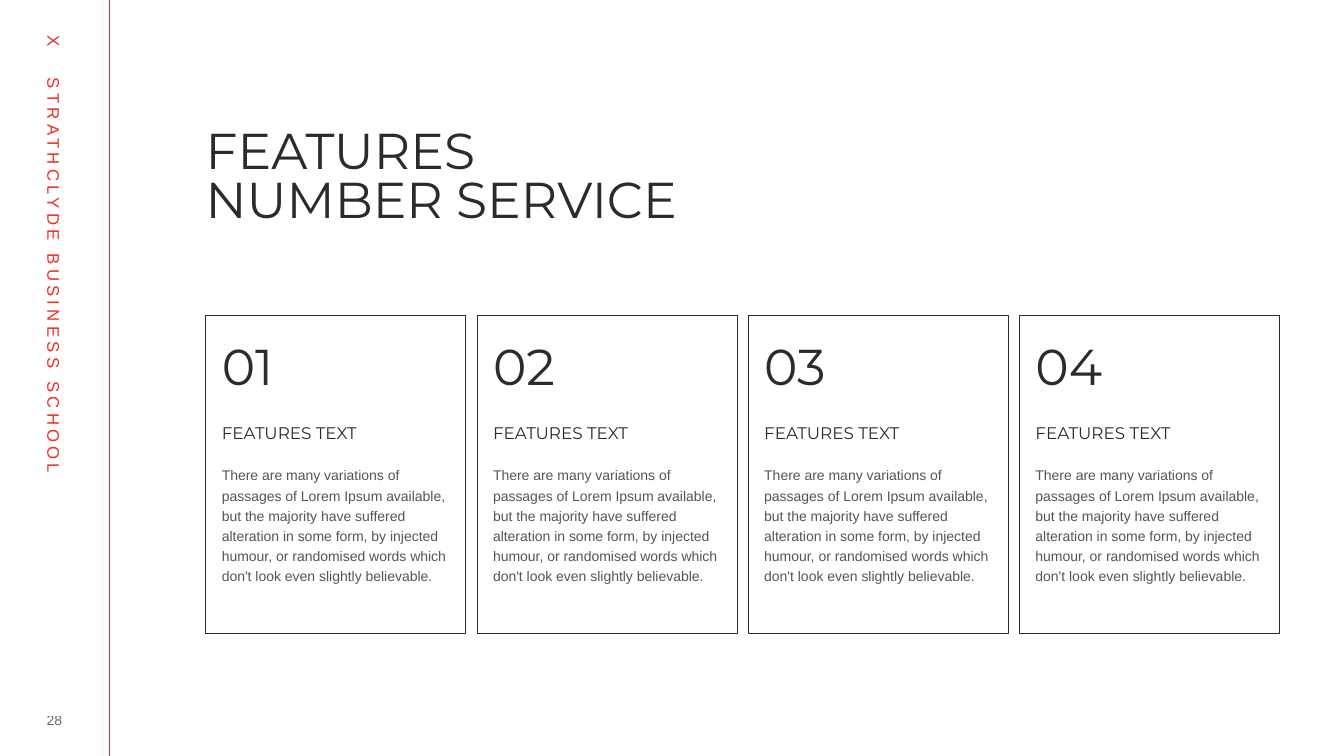
from dataclasses import dataclass

from lxml.etree import SubElement
from pptx import Presentation
from pptx.dml.color import RGBColor
from pptx.enum.shapes import MSO_CONNECTOR, MSO_SHAPE
from pptx.enum.text import MSO_ANCHOR, MSO_AUTO_SIZE, PP_ALIGN
from pptx.oxml.ns import qn
from pptx.util import Inches, Pt


@dataclass(frozen=True)
class Theme:
    ink: RGBColor = RGBColor(0x2B, 0x2B, 0x2B)
    accent: RGBColor = RGBColor(0xEE, 0x30, 0x24)
    paper: RGBColor = RGBColor(0xFF, 0xFF, 0xFF)
    heading_font: str = "Montserrat"
    body_font: str = "Arial"
    display_size: int = 36
    label_size: int = 12
    body_size: int = 10
    line_width: float = 0.5


class SlideBuilder:
    def __init__(self, slide, theme):
        self.slide = slide
        self.theme = theme
        slide.background.fill.solid()
        slide.background.fill.fore_color.rgb = theme.paper

    def set_text(self, shape, text, size, font, color, insets, spacing=1.0, opacity=100,
                 align=PP_ALIGN.LEFT, anchor=MSO_ANCHOR.TOP, wrap=True):
        frame = shape.text_frame
        frame.text = text
        frame.word_wrap = wrap
        frame.auto_size = MSO_AUTO_SIZE.NONE
        frame.vertical_anchor = anchor
        (frame.margin_left, frame.margin_top,
         frame.margin_right, frame.margin_bottom) = map(Inches, insets)
        paragraph = frame.paragraphs[0]
        paragraph.alignment = align
        paragraph.line_spacing = spacing
        for run in paragraph.runs:
            run.font.size = Pt(size)
            run.font.name = font
            run.font.color.rgb = color
            if opacity < 100:
                for color_element in run._r.iter(qn("a:srgbClr")):
                    SubElement(color_element, qn("a:alpha"), val=str(opacity * 1000))

    def text(self, box, text, size, font, color, insets=(0, 0.05, 0, 0.05), **options):
        shape = self.slide.shapes.add_textbox(*map(Inches, box))
        self.set_text(shape, text, size, font, color, insets, **options)
        return shape

    def title(self, box, text):
        shape = self.slide.shapes.title
        shape.left, shape.top, shape.width, shape.height = map(Inches, box)
        self.set_text(shape, text, self.theme.display_size, self.theme.heading_font,
                      self.theme.ink, (0, 0.21, 0, 0), spacing=0.8)

    def rule(self, x, top, bottom):
        line = self.slide.shapes.add_connector(
            MSO_CONNECTOR.STRAIGHT, Inches(x), Inches(top), Inches(x), Inches(bottom))
        line.line.color.rgb = self.theme.accent
        line.line.width = Pt(self.theme.line_width)
        SubElement(line._element.spPr, qn("a:effectLst"))

    def sidebar(self, box, text, tab_position):
        shape = self.text(box, text, self.theme.label_size, self.theme.body_font,
                          self.theme.accent, (0.1, 0.05, 0.1, 0.05), wrap=False)
        shape.rotation = 90
        paragraph = shape.text_frame.paragraphs[0]
        tabs = SubElement(paragraph._p.get_or_add_pPr(), qn("a:tabLst"))
        SubElement(tabs, qn("a:tab"), pos=str(Inches(tab_position)), algn="l")
        for run in paragraph.runs:
            run._r.get_or_add_rPr().set("spc", "300")

    def page_number(self, box, number):
        self.text(box, number, self.theme.body_size, self.theme.body_font, self.theme.ink,
                  (0, 0, 0, 0), opacity=70, align=PP_ALIGN.CENTER, anchor=MSO_ANCHOR.MIDDLE)

    def frame(self, box):
        shape = self.slide.shapes.add_shape(MSO_SHAPE.RECTANGLE, *map(Inches, box))
        shape.shadow.inherit = False
        shape.fill.background()
        shape.line.color.rgb = self.theme.ink
        shape.line.width = Pt(self.theme.line_width)

    def feature_card(self, left, number, heading, description):
        theme = self.theme
        text_left, text_width = left + 0.16, 2.26
        self.frame((left, 3.13, 2.58, 3.15))
        self.text((text_left, 3.44, text_width, 0.57), number, theme.display_size,
                  theme.heading_font, theme.ink, spacing=0.7)
        self.text((text_left, 4.2, text_width, 0.26), heading, theme.label_size,
                  theme.heading_font, theme.ink, spacing=0.7)
        self.text((text_left, 4.55, text_width, 1.51), description, theme.body_size,
                  theme.body_font, theme.ink, spacing=1.2, opacity=80)


DESCRIPTION = (
    "There are many variations of passages of Lorem Ipsum available, but the majority "
    "have suffered alteration in some form, by injected humour, or randomised words "
    "which don't look even slightly believable."
)


def main():
    presentation = Presentation()
    presentation.slide_width = Inches(13.33)
    presentation.slide_height = Inches(7.5)
    slide = presentation.slides.add_slide(presentation.slide_layouts[5])
    builder = SlideBuilder(slide, Theme())

    builder.rule(1.08, 0, 7.5)
    builder.sidebar((-2.3, 2.94, 5.67, 0.3), "X\tSTRATHCLYDE BUSINESS SCHOOL", 0.42)
    builder.page_number((0.26, 7.02, 0.56, 0.25), "28")
    builder.title((2.04, 1.09, 8.51, 1.77), "FEATURES\vNUMBER SERVICE")
    first_left, card_step = 2.04, 2.69
    for index in range(4):
        builder.feature_card(first_left + index * card_step, f"{index + 1:02d}",
                             "FEATURES TEXT", DESCRIPTION)

    presentation.save("out.pptx")


if __name__ == "__main__":
    main()
